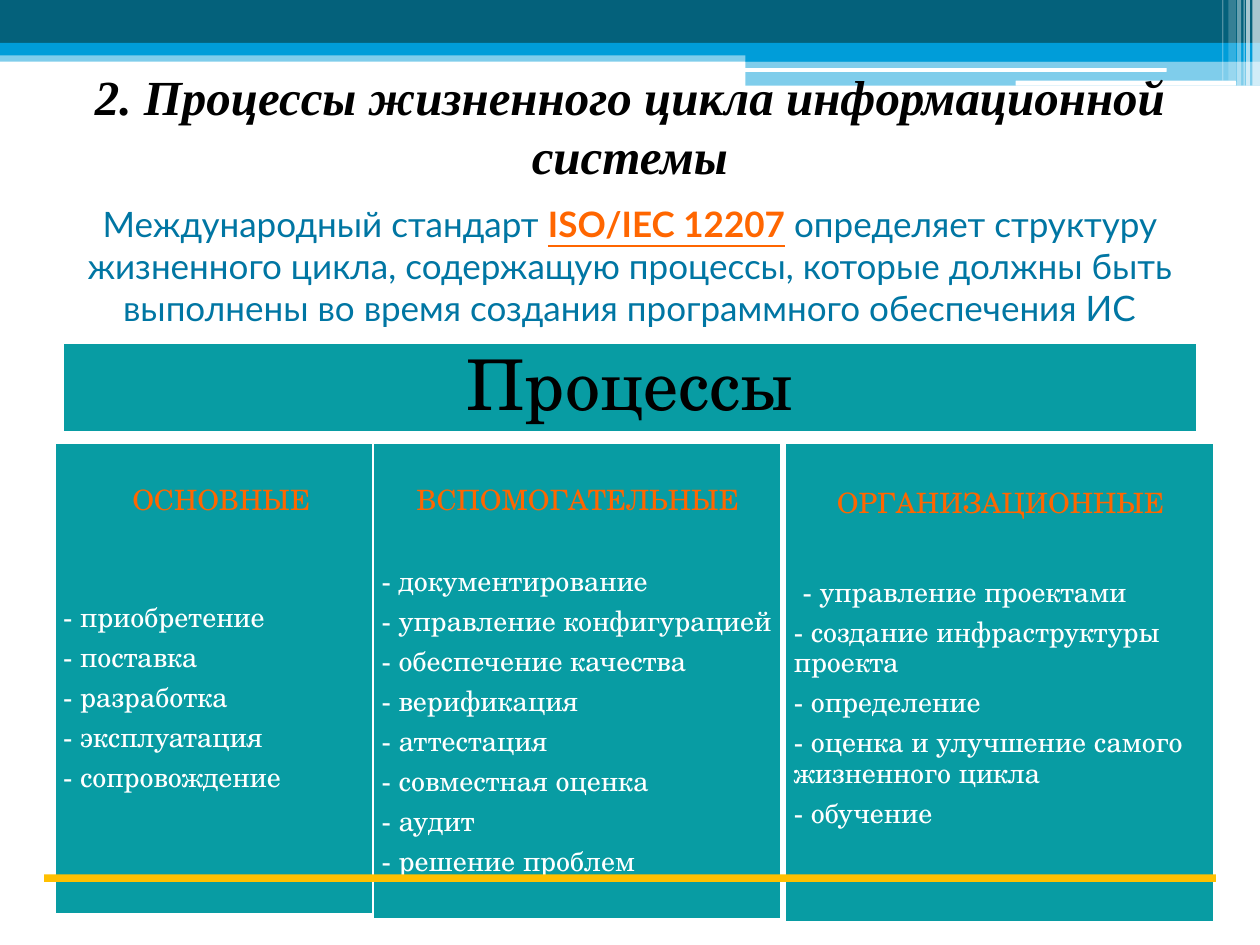
from dataclasses import dataclass

from lxml.etree import SubElement
from pptx import Presentation
from pptx.dml.color import RGBColor
from pptx.enum.shapes import MSO_SHAPE as Shape
from pptx.enum.text import MSO_ANCHOR as Anchor, MSO_AUTO_SIZE as AutoSize, PP_ALIGN as Align
from pptx.oxml.ns import qn
from pptx.util import Pt


@dataclass(frozen=True)
class Theme:
    dark: str = "04617B"
    blue: str = "009DD9"
    teal: str = "089CA3"
    white: str = "FFFFFF"
    black: str = "000000"
    orange: str = "FF6600"
    gold: str = "FFC000"
    lead: str = "0076A3"
    serif: str = "TeX Gyre Schola"
    sans: str = "Lato"
    heading_font: str = "Times New Roman"
    heading_size: float = 28
    lead_size: float = 20
    banner_size: float = 40
    body_size: float = 16
    item_gap: float = 5.6
    line_spacing: float = 0.9


THEME = Theme()

# Header bars: left, top, width, height, colour, opacity in percent
HEADER_BARS = [
    (0, 28.8, 720, 6.5, THEME.blue, 50),
    (0, 0, 720, 24.5, THEME.dark, 100),
    (0, 24.5, 720, 7.2, THEME.blue, 100),
    (425.9, 28.1, 294.1, 7.2, THEME.blue, 100),
    (425.9, 34.6, 294.1, 14.4, THEME.blue, 50),
]
HEADER_PILLS = [(425.5, 38.9, 241.2, 2.2), (580.3, 46.1, 126, 2.9)]
# Thin stripes at the right edge: left, width, height, opacity
HEADER_STRIPES = [
    (715.7, 4.3, 49, 65), (712.1, 2.2, 49, 65), (710.6, 0.7, 49, 60),
    (707, 2.2, 49, 40), (702, 4.3, 46.1, 20), (698.4, 0.7, 46.1, 30),
]

# Columns: left, width, height, space above heading, space below heading, heading, items
COLUMN_TOP = 252.7
COLUMNS = [
    (31, 190, 270, 25, 50, "ОСНОВНЫЕ",
     ["приобретение", "поставка", "разработка", "эксплуатация", "сопровождение"]),
    (213.1, 233.3, 272.9, 25, 29, "ВСПОМОГАТЕЛЬНЫЕ",
     ["документирование", "управление конфигурацией", "обеспечение качества",
      "верификация", "аттестация", "совместная оценка", "аудит", "решение проблем"]),
    (448.6, 245.5, 274.3, 27, 33.5, "ОРГАНИЗАЦИОННЫЕ",
     ["управление проектами", "создание инфраструктуры проекта", "определение",
      "оценка и улучшение самого жизненного цикла", "обучение"]),
]


def add_block(slide, left, top, width, height, color, opacity=100,
              outline=None, kind=Shape.RECTANGLE):
    shape = slide.shapes.add_shape(kind, Pt(left), Pt(top), Pt(width), Pt(height))
    shape.shadow.inherit = False
    shape.fill.solid()
    shape.fill.fore_color.rgb = RGBColor.from_string(color)
    if opacity < 100:
        color_element = shape.fill._xPr.find(qn("a:solidFill"))[0]
        SubElement(color_element, qn("a:alpha"), val=str(opacity * 1000))
    if outline:
        shape.line.color.rgb = RGBColor.from_string(outline)
        shape.line.width = Pt(1.5)
    else:
        shape.line.fill.background()
    return shape


def set_frame(shape, anchor, left=7.2, top=3.6, right=7.2, bottom=3.6):
    frame = shape.text_frame
    frame.word_wrap = True
    frame.auto_size = AutoSize.NONE
    frame.vertical_anchor = anchor
    frame.margin_left, frame.margin_top = Pt(left), Pt(top)
    frame.margin_right, frame.margin_bottom = Pt(right), Pt(bottom)
    return frame


def write(paragraph, text, *, size, font, color, bold=False, italic=False,
          underline=False, align=Align.CENTER, spacing=1.0, after=0):
    """Append a run to a paragraph and format both."""
    paragraph.alignment = align
    paragraph.line_spacing = spacing
    paragraph.space_before, paragraph.space_after = Pt(0), Pt(after)
    run = paragraph.add_run()
    run.text = text
    run.font.size, run.font.name = Pt(size), font
    run.font.bold, run.font.italic, run.font.underline = bold, italic, underline
    run.font.color.rgb = RGBColor.from_string(color)


def add_header(slide):
    for bar in HEADER_BARS:
        add_block(slide, *bar)
    for pill in HEADER_PILLS:
        add_block(slide, *pill, THEME.white, kind=Shape.ROUNDED_RECTANGLE)
    for left, width, height, opacity in HEADER_STRIPES:
        add_block(slide, left, 0, width, height, THEME.white, opacity)


def add_lead(slide):
    title = slide.shapes.title
    title.left, title.top, title.width, title.height = Pt(36), Pt(109.4), Pt(648), Pt(84.2)
    paragraph = set_frame(title, Anchor.MIDDLE).paragraphs[0]
    style = dict(size=THEME.lead_size, font=THEME.sans)
    write(paragraph, "Международный стандарт ", color=THEME.lead, **style)
    write(paragraph, "ISO/IEC 12207", color=THEME.orange, bold=True, underline=True, **style)
    write(paragraph, " определяет структуру жизненного цикла, содержащую процессы, "
          "которые должны быть выполнены во время создания программного обеспечения ИС",
          color=THEME.lead, **style)


def add_banner(slide):
    banner = add_block(slide, 36.7, 196.6, 646.6, 49.7, THEME.teal)
    frame = set_frame(banner, Anchor.MIDDLE, 12, 0, 12, 0)
    write(frame.paragraphs[0], "Процессы", size=THEME.banner_size, font=THEME.serif,
          color=THEME.black, spacing=THEME.line_spacing)


def add_column(slide, left, width, height, above, below, heading, items):
    column = add_block(slide, left, COLUMN_TOP, width, height, THEME.teal, outline=THEME.white)
    frame = set_frame(column, Anchor.TOP, 5, above, 4, 5)
    style = dict(size=THEME.body_size, font=THEME.serif, spacing=THEME.line_spacing)
    write(frame.paragraphs[0], heading, color=THEME.orange, after=below, **style)
    for item in items:
        write(frame.add_paragraph(), f"- {item}", color=THEME.white,
              align=Align.LEFT, after=THEME.item_gap, **style)
    return frame


def add_heading(slide):
    box = slide.shapes.add_textbox(Pt(8.6), Pt(34.6), Pt(702.7), Pt(74.9))
    write(set_frame(box, Anchor.TOP).paragraphs[0],
          "2. Процессы жизненного цикла информационной системы",
          size=THEME.heading_size, font=THEME.heading_font, color=THEME.black,
          bold=True, italic=True)


def main():
    presentation = Presentation()
    presentation.slide_width, presentation.slide_height = Pt(720), Pt(540)
    slide = presentation.slides.add_slide(presentation.slide_layouts[5])

    # Header decoration and lead sentence
    add_header(slide)
    add_lead(slide)

    # Process groups
    add_banner(slide)
    frames = [add_column(slide, *column) for column in COLUMNS]
    # The first organisational process is slightly indented
    frames[-1].paragraphs[1]._p.get_or_add_pPr().set("indent", str(Pt(5)))

    # Bottom rule and slide heading
    add_block(slide, 25.2, 499.7, 669.6, 4.3, THEME.gold)
    add_heading(slide)

    presentation.save("out.pptx")


if __name__ == "__main__":
    main()
